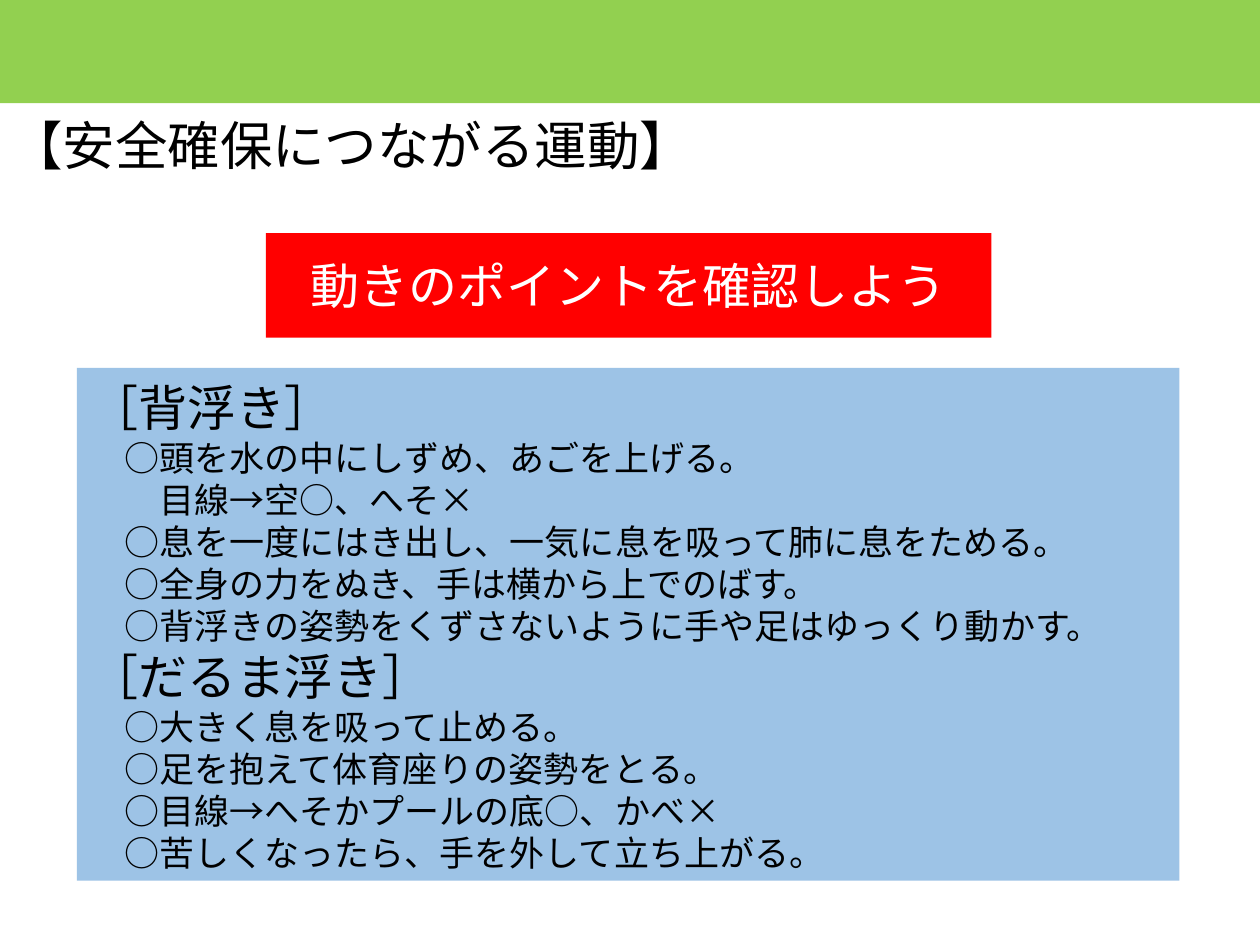
from pptx import Presentation
from pptx.dml.color import RGBColor
from pptx.enum.shapes import MSO_SHAPE
from pptx.enum.text import MSO_ANCHOR, MSO_AUTO_SIZE, PP_ALIGN
from pptx.oxml.ns import qn
from pptx.util import Inches, Pt
from lxml import etree

RECTANGLE = MSO_SHAPE.RECTANGLE
TOP, MIDDLE = MSO_ANCHOR.TOP, MSO_ANCHOR.MIDDLE
LEFT, CENTER = PP_ALIGN.LEFT, PP_ALIGN.CENTER
NO_AUTOFIT = MSO_AUTO_SIZE.NONE

BLACK = RGBColor(0x00, 0x00, 0x00)
WHITE = RGBColor(0xFF, 0xFF, 0xFF)
GREEN = RGBColor(0x92, 0xD0, 0x50)
RED = RGBColor(0xFF, 0x00, 0x00)
BLUE = RGBColor(0x9D, 0xC3, 0xE6)

FONT = "Noto Sans CJK JP"
HEADING_SIZE = 28
POINT_SIZE = 20
LINE_FACTOR = 1.2

TECHNIQUES = [
    ("［背浮き］", [
        (1, "○頭を水の中にしずめ、あごを上げる。"),
        (2, "目線→空○、へそ×"),
        (1, "○息を一度にはき出し、一気に息を吸って肺に息をためる。"),
        (1, "○全身の力をぬき、手は横から上でのばす。"),
        (1, "○背浮きの姿勢をくずさないように手や足はゆっくり動かす。"),
    ]),
    ("［だるま浮き］", [
        (1, "○大きく息を吸って止める。"),
        (1, "○足を抱えて体育座りの姿勢をとる。"),
        (1, "○目線→へそかプールの底○、かべ×"),
        (1, "○苦しくなったら、手を外して立ち上がる。"),
    ]),
]


class SlideBuilder:
    """Holds the font style and the slide that is being built."""

    def __init__(self, slide, font):
        self.slide = slide
        self.font = font

    def add_run(self, paragraph, text, size, color):
        run = paragraph.add_run()
        run.text = text
        run.font.size = Pt(size)
        run.font.name = self.font
        run.font.color.rgb = color
        properties = run.font._element
        east_asian = etree.SubElement(properties, qn("a:ea"))
        east_asian.set("typeface", self.font)

    def frame(self, shape, anchor):
        text_frame = shape.text_frame
        text_frame.word_wrap = True
        text_frame.auto_size = NO_AUTOFIT
        text_frame.vertical_anchor = anchor
        return text_frame

    def title(self, text, left, top, width, height):
        shape = self.slide.shapes.title
        shape.left, shape.top = Inches(left), Inches(top)
        shape.width, shape.height = Inches(width), Inches(height)
        shape.fill.solid()
        shape.fill.fore_color.rgb = WHITE
        paragraph = self.frame(shape, MIDDLE).paragraphs[0]
        paragraph.alignment = LEFT
        self.add_run(paragraph, text, 30, BLACK)

    def box(self, color, left, top, width, height):
        shape = self.slide.shapes.add_shape(
            RECTANGLE, Inches(left), Inches(top), Inches(width), Inches(height))
        shape.shadow.inherit = False
        shape.fill.solid()
        shape.fill.fore_color.rgb = color
        shape.line.fill.background()
        return shape

    def banner(self, text, left, top, width, height):
        shape = self.box(RED, left, top, width, height)
        paragraph = self.frame(shape, MIDDLE).paragraphs[0]
        paragraph.alignment = CENTER
        self.add_run(paragraph, text, HEADING_SIZE, WHITE)

    def panel(self, techniques, left, top, width, height):
        text_frame = self.frame(self.box(BLUE, left, top, width, height), TOP)
        text_frame.margin_top = Inches(0.08)
        lines = []
        for heading, points in techniques:
            lines.append((0, heading, HEADING_SIZE))
            lines.extend((level, text, POINT_SIZE) for level, text in points)
        for index, (level, text, size) in enumerate(lines):
            paragraph = text_frame.add_paragraph() if index else text_frame.paragraphs[0]
            paragraph.alignment = LEFT
            paragraph.line_spacing = Pt(size * LINE_FACTOR)
            properties = paragraph._p.get_or_add_pPr()
            properties.set("marL", str(Pt(size * level)))
            properties.set("indent", "0")
            self.add_run(paragraph, text, size, BLACK)


def main():
    presentation = Presentation()
    presentation.slide_width = Inches(10)
    presentation.slide_height = Inches(7.5)
    slide = presentation.slides.add_slide(presentation.slide_layouts[5])
    builder = SlideBuilder(slide, FONT)
    builder.title("【安全確保につながる運動】", -0.02, 0.88, 5.73, 0.53)
    builder.panel(TECHNIQUES, 0.61, 2.92, 8.75, 4.07)
    builder.banner("動きのポイントを確認しよう", 2.11, 1.85, 5.76, 0.83)
    builder.box(GREEN, -0.02, -0.01, 10.02, 0.83)
    presentation.save("out.pptx")


if __name__ == "__main__":
    main()
